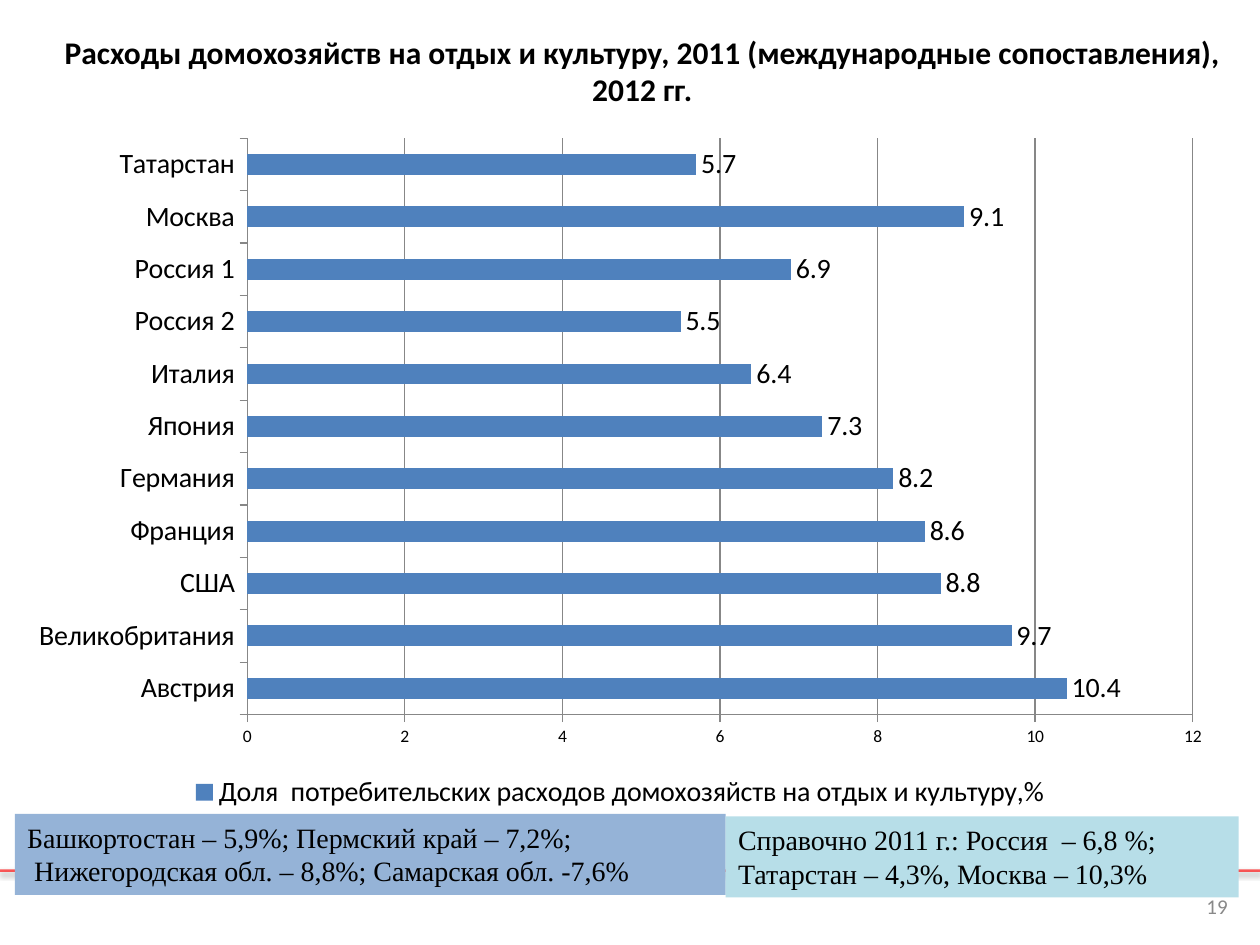
from dataclasses import dataclass

from lxml.etree import SubElement
from pptx import Presentation
from pptx.chart.data import CategoryChartData
from pptx.dml.color import RGBColor
from pptx.enum.chart import XL_CHART_TYPE, XL_LABEL_POSITION, XL_LEGEND_POSITION, XL_TICK_MARK
from pptx.enum.shapes import MSO_CONNECTOR, MSO_SHAPE
from pptx.enum.text import MSO_ANCHOR, MSO_AUTO_SIZE, PP_ALIGN
from pptx.oxml.ns import qn
from pptx.util import Cm, Pt


@dataclass(frozen=True)
class Theme:
    sans: str = "Calibri"
    serif: str = "Times New Roman"
    text: str = "000000"
    muted: str = "898989"
    rule: str = "FF0000"
    bar: str = "4F81BD"
    grid: str = "878787"
    regions: str = "95B3D7"
    reference: str = "B7DEE8"
    title_size: int = 18
    body_size: int = 16
    number_size: int = 12
    axis_size: int = 10


THEME = Theme()

SERIES = "Доля  потребительских расходов домохозяйств на отдых и культуру,%"
SHARES = {
    "Австрия": 10.4, "Великобритания": 9.7, "США": 8.8, "Франция": 8.6,
    "Германия": 8.2, "Япония": 7.3, "Италия": 6.4, "Россия 2": 5.5,
    "Россия 1": 6.9, "Москва": 9.1, "Татарстан": 5.7,
}


def rgb(value):
    return RGBColor.from_string(value)


def apply(obj, **values):
    for name, value in values.items():
        setattr(obj, name, value)


def style_font(font, size, name=THEME.sans, color=THEME.text, bold=False):
    apply(font, size=Pt(size), name=name, bold=bold)
    font.color.rgb = rgb(color)


def place(sp, left, top, width, height):
    apply(sp, left=Cm(left), top=Cm(top), width=Cm(width), height=Cm(height))


def write(sp, lines, align=PP_ALIGN.LEFT, anchor=MSO_ANCHOR.TOP, **font):
    tf = sp.text_frame
    apply(tf, word_wrap=True, auto_size=MSO_AUTO_SIZE.NONE, vertical_anchor=anchor)
    for i, line in enumerate(lines):
        p = tf.paragraphs[0] if i == 0 else tf.add_paragraph()
        p.alignment = align
        r = p.add_run()
        r.text = line
        style_font(r.font, **font)


def add_rule(s, y, width):
    sp = s.shapes.add_connector(MSO_CONNECTOR.STRAIGHT, 0, Cm(y), width, Cm(y))
    sp.line.width = Pt(1.5)
    sp.line.color.rgb = rgb(THEME.rule)
    # Translucent line with a soft shadow below it
    props = sp.line._get_or_add_ln().getparent()
    color = props.find(".//" + qn("a:srgbClr"))
    SubElement(color, qn("a:alpha"), val="64000")
    effects = SubElement(props, qn("a:effectLst"))
    shadow = SubElement(effects, qn("a:outerShdw"), blurRad="40000", dist="20000",
                        dir="5400000", rotWithShape="0")
    black = SubElement(shadow, qn("a:srgbClr"), val="000000")
    SubElement(black, qn("a:alpha"), val="38000")


def add_note(s, box, fill, lines):
    sp = s.shapes.add_shape(MSO_SHAPE.RECTANGLE, *map(Cm, box))
    sp.shadow.inherit = False
    sp.fill.solid()
    sp.fill.fore_color.rgb = rgb(fill)
    sp.line.fill.background()
    write(sp, lines, size=THEME.body_size, name=THEME.serif)


def add_bar_chart(s, box):
    data = CategoryChartData()
    data.categories = SHARES.keys()
    data.add_series(SERIES, SHARES.values())
    chart = s.shapes.add_chart(XL_CHART_TYPE.BAR_CLUSTERED, *map(Cm, box), data).chart
    style_font(chart.font, THEME.axis_size)
    apply(chart, has_title=False, has_legend=True)
    apply(chart.legend, position=XL_LEGEND_POSITION.BOTTOM, include_in_layout=False)
    style_font(chart.legend.font, THEME.body_size)

    # Axes and grid
    cat, val = chart.category_axis, chart.value_axis
    apply(cat, has_major_gridlines=False)
    apply(val, has_major_gridlines=True, minimum_scale=0, maximum_scale=12, major_unit=2)
    for axis, size in ((cat, THEME.body_size), (val, THEME.axis_size)):
        axis.major_tick_mark = XL_TICK_MARK.OUTSIDE
        style_font(axis.tick_labels.font, size)
    for line in (cat.format.line, val.format.line, val.major_gridlines.format.line):
        line.width = Pt(0.75)
        line.color.rgb = rgb(THEME.grid)

    # Bars and their values
    plot = chart.plots[0]
    apply(plot, gap_width=150, vary_by_categories=False, has_data_labels=True)
    apply(plot.data_labels, show_value=True, position=XL_LABEL_POSITION.OUTSIDE_END)
    style_font(plot.data_labels.font, THEME.body_size)
    fill = plot.series[0].format.fill
    fill.solid()
    fill.fore_color.rgb = rgb(THEME.bar)


def main():
    prs = Presentation()
    apply(prs, slide_width=Cm(25.4), slide_height=Cm(19.05))
    s = prs.slides.add_slide(prs.slide_layouts[5])

    # Title
    title = s.shapes.title
    place(title, 0.5, 0.53, 24.9, 1.8)
    write(title, ["Расходы домохозяйств на отдых и культуру, 2011 "
                  "(международные сопоставления), 2012 гг."],
          align=PP_ALIGN.CENTER, size=THEME.title_size, bold=True)

    # Footer rule and page number
    add_rule(s, 17.55, prs.slide_width)
    number = s.shapes.add_textbox(Cm(23.7), Cm(17.75), Cm(1.3), Cm(1.02))
    write(number, ["19"], align=PP_ALIGN.RIGHT, anchor=MSO_ANCHOR.MIDDLE,
          size=THEME.number_size, color=THEME.muted)

    # Chart
    add_bar_chart(s, (0.3, 2.51, 24.41, 13.92))

    # Notes below the chart
    add_note(s, (0.3, 16.41, 14.33, 1.63), THEME.regions,
             ["Башкортостан – 5,9%; Пермский край – 7,2%;",
              " Нижегородская обл. – 8,8%; Самарская обл. -7,6%"])
    add_note(s, (14.63, 16.46, 10.34, 1.63), THEME.reference,
             ["Справочно 2011 г.: Россия  – 6,8 %;",
              "Татарстан – 4,3%, Москва – 10,3%"])

    prs.save("out.pptx")


if __name__ == "__main__":
    main()
